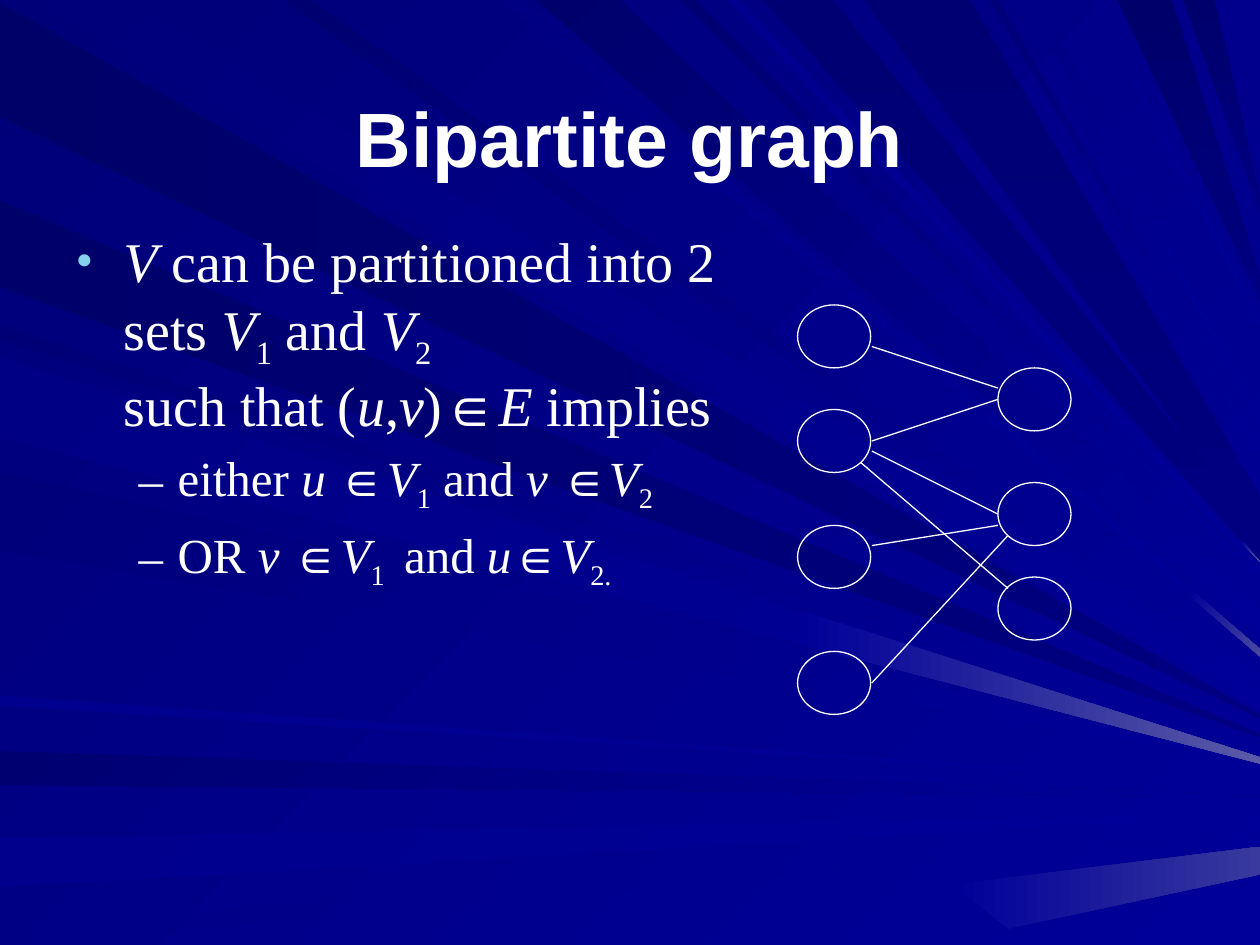
"""Build a slide that defines a bipartite graph beside a drawn example."""
from dataclasses import dataclass

from lxml.etree import SubElement
from pptx import Presentation
from pptx.dml.color import RGBColor
from pptx.enum.shapes import MSO_CONNECTOR, MSO_SHAPE
from pptx.enum.text import MSO_ANCHOR, MSO_AUTO_SIZE, PP_ALIGN
from pptx.oxml.ns import qn
from pptx.util import Inches, Pt


@dataclass(frozen=True)
class Theme:
    white: str = "FFFFFF"
    bullet: str = "86D1EC"
    night: str = "000078"
    navy: str = "000080"
    royal: str = "000099"
    dim_glow: str = "39399E"
    mid_glow: str = "4A4AA1"
    bright_glow: str = "5A5AA6"
    title_font: str = "Arial"
    body_font: str = "Times New Roman"
    title_size: int = 44
    body_sizes: tuple = (32, 28)
    line_width: float = 0.75


theme = Theme()


def paint(fill, start, end, angle):
    fill.gradient()
    fill.gradient_angle = -angle % 360
    for stop, color in zip(fill.gradient_stops, (start, end)):
        stop.color.rgb = RGBColor.from_string(color)


def style_font(font, name, size):
    font.name = name
    font.size = Pt(size)
    font.color.rgb = RGBColor.from_string(theme.white)


prs = Presentation()
prs.slide_width, prs.slide_height = Inches(10), Inches(7.5)
slide = prs.slides.add_slide(prs.slide_layouts[1])
shapes = slide.shapes
title, body = slide.placeholders[0], slide.placeholders[1]
paint(slide.background.fill, theme.night, theme.royal, 45)

rays = [
    ("left", 0.02, 0.93, 5.7, "000069", theme.navy),
    ("top", 0.26, 1.01, 5.63, "00007B", theme.royal),
    ("left", 5.96, 6.23, 6.32, "000071", theme.royal),
    ("left", 6.65, 7.04, 6.47, "00008C", theme.royal),
    ("left", 7.35, 7.5, 6.62, "000085", theme.royal),
    ("left", 2.58, 2.7, 5.89, "000076", theme.royal),
    ("left", 1.59, 2.28, 5.85, "00006B", theme.navy),
    ("top", 3.98, 4.16, 5.21, "000083", theme.royal),
    ("top", 4.26, 4.92, 5.07, "00006D", theme.royal),
    ("top", 5.4, 5.52, 4.63, "000073", theme.royal),
    ("top", 6.06, 6.61, 4.46, "000073", theme.navy),
    ("top", 8.87, 9.3, 2.37, "00006B", theme.navy),
    ("top", 9.39, 9.64, 1.67, "00006D", theme.navy),
    ("left", 2.78, 3.42, 6.02, "00007E", theme.royal),
    ("left", 3.74, 4.37, 6.06, "00007B", theme.royal),
    ("left", 5.52, 5.6, 6.23, "00008E", theme.royal),
    ("top", 2.25, 2.47, 5.52, "000070", theme.royal),
    ("top", 5.77, 5.88, 4.54, "00008E", theme.royal),
    ("top", 6.86, 7.7, 4.28, "000073", theme.navy),
    ("top", 7.85, 7.92, 3.6, "000078", theme.royal),
    ("top", 8.15, 8.24, 3.36, "000085", theme.royal),
    ("top", 8.65, 8.72, 2.58, "00008A", theme.royal),
    ("left", 2.83, 3.47, 6.06, "000085", theme.royal),
]
taper = {"left": 0.03, "top": 0.4}
navy_angles = {"left": 0, "top": 90}
beams = []
for side, near, far, tip, start, end in rays:
    base = [(0, near), (0, far)] if side == "left" else [(far, 0), (near, 0)]
    tip_edge = [(10, tip), (10, tip - taper[side] * (far - near))]
    angle = navy_angles[side] if end == theme.navy else 45
    beams.append((base + tip_edge, start, end, angle))
beams += [
    ([(10, 6.94), (10, 6.72), (7.56, 7.02), (8, 7.37)], theme.royal, theme.dim_glow, 0),
    ([(10, 5.21), (10, 5.15), (9.47, 4.69), (9.44, 4.73)], theme.royal, theme.mid_glow, 45),
    ([(10, 4.46), (9.87, 4.3), (9.85, 4.31)], theme.royal, theme.bright_glow, 45),
    ([(10, 6.01), (6.37, 4.85), (6.33, 5.11), (10, 6.06)], theme.royal, theme.bright_glow, 0),
]
for outline, start, end, angle in beams:
    corners = [(Inches(x), Inches(y)) for x, y in outline]
    builder = shapes.build_freeform(*corners[0])
    builder.add_line_segments(corners[1:], close=True)
    beam = builder.convert_to_shape()
    beam.shadow.inherit = False
    beam.line.fill.background()
    paint(beam.fill, start, end, angle)

shapes.element.append(title.element)
title.left, title.top, title.width, title.height = map(Inches, (0.75, 0.67, 8.5, 0.83))
title.text_frame.vertical_anchor = MSO_ANCHOR.MIDDLE
title.text_frame.auto_size = MSO_AUTO_SIZE.NONE
heading = title.text_frame.paragraphs[0]
heading.alignment = PP_ALIGN.CENTER
heading_run = heading.add_run()
heading_run.text = "Bipartite graph"
style_font(heading_run.font, theme.title_font, theme.title_size)
heading_run.font.bold = True

vertex_columns = {6.33: [2.42, 3.25, 4.17, 5.17], 7.92: [2.92, 3.83, 4.58]}
for left, tops in vertex_columns.items():
    for top in tops:
        vertex = shapes.add_shape(MSO_SHAPE.OVAL, Inches(left), Inches(top), Inches(0.58), Inches(0.5))
        vertex.shadow.inherit = False
        vertex.fill.background()
        vertex.line.color.rgb = RGBColor.from_string(theme.white)
        vertex.line.width = Pt(theme.line_width)

edges = [
    (6.92, 2.75, 7.92, 3.08),
    (7.92, 3.17, 6.92, 3.5),
    (6.92, 5.42, 8, 4.25),
    (6.92, 4.33, 7.92, 4.17),
    (6.92, 3.58, 7.92, 4.08),
    (6.83, 3.67, 8, 4.67),
]
for ends in edges:
    edge = shapes.add_connector(MSO_CONNECTOR.STRAIGHT, *map(Inches, ends))
    edge.line.color.rgb = RGBColor.from_string(theme.white)
    edge.line.width = Pt(theme.line_width)
    SubElement(edge.element.spPr, qn("a:effectLst"))

shapes.element.append(body.element)
body.left, body.top, body.width, body.height = map(Inches, (0.5, 1.75, 5.33, 4.95))
body.text_frame.word_wrap = True
body.text_frame.auto_size = MSO_AUTO_SIZE.NONE

bullet_levels = [("•", theme.bullet, 90, 0.38, -0.38), ("–", theme.white, 100, 0.81, -0.31)]
statements = [
    (0, [("V", "italic"), (" can be partitioned into 2 sets ", ""), ("V", "italic"), ("1", "sub"),
         (" and ", ""), ("V", "italic"), ("2", "sub"), ("\n", ""), ("such that (", ""), ("u", "italic"),
         (",", ""), ("v", "italic"), (")∈", ""), ("E", "italic"), (" implies", "")]),
    (1, [("either ", ""), ("u ", "italic"), ("∈", ""), ("V", "italic"), ("1", "sub"),
         (" and ", ""), ("v ", "italic"), ("∈", ""), ("V", "italic"), ("2", "sub")]),
    (1, [("OR ", ""), ("v ", "italic"), ("∈", ""), ("V", "italic"), ("1 ", "sub"),
         (" and ", ""), ("u", "italic"), ("∈", ""), ("V", "italic"), ("2.", "sub")]),
]
for index, (level, pieces) in enumerate(statements):
    statement = body.text_frame.add_paragraph() if index else body.text_frame.paragraphs[0]
    statement.level = level
    mark, mark_color, mark_percent, margin, indent = bullet_levels[level]
    properties = statement._p.get_or_add_pPr()
    properties.set("marL", str(Inches(margin)))
    properties.set("indent", str(Inches(indent)))
    SubElement(SubElement(properties, qn("a:buClr")), qn("a:srgbClr"), val=mark_color)
    SubElement(properties, qn("a:buSzPct"), val=str(mark_percent * 1000))
    SubElement(properties, qn("a:buFont"), typeface=theme.body_font)
    SubElement(properties, qn("a:buChar"), char=mark)
    size = theme.body_sizes[level]
    statement.space_before = Pt(size * 0.2 if index else 0)
    for text, style in pieces:
        if text == "\n":
            statement.add_line_break()
            continue
        piece = statement.add_run()
        piece.text = text
        style_font(piece.font, theme.body_font, size)
        piece.font.italic = style == "italic"
        if style == "sub":
            piece._r.get_or_add_rPr().set("baseline", "-25000")

prs.save("out.pptx")
